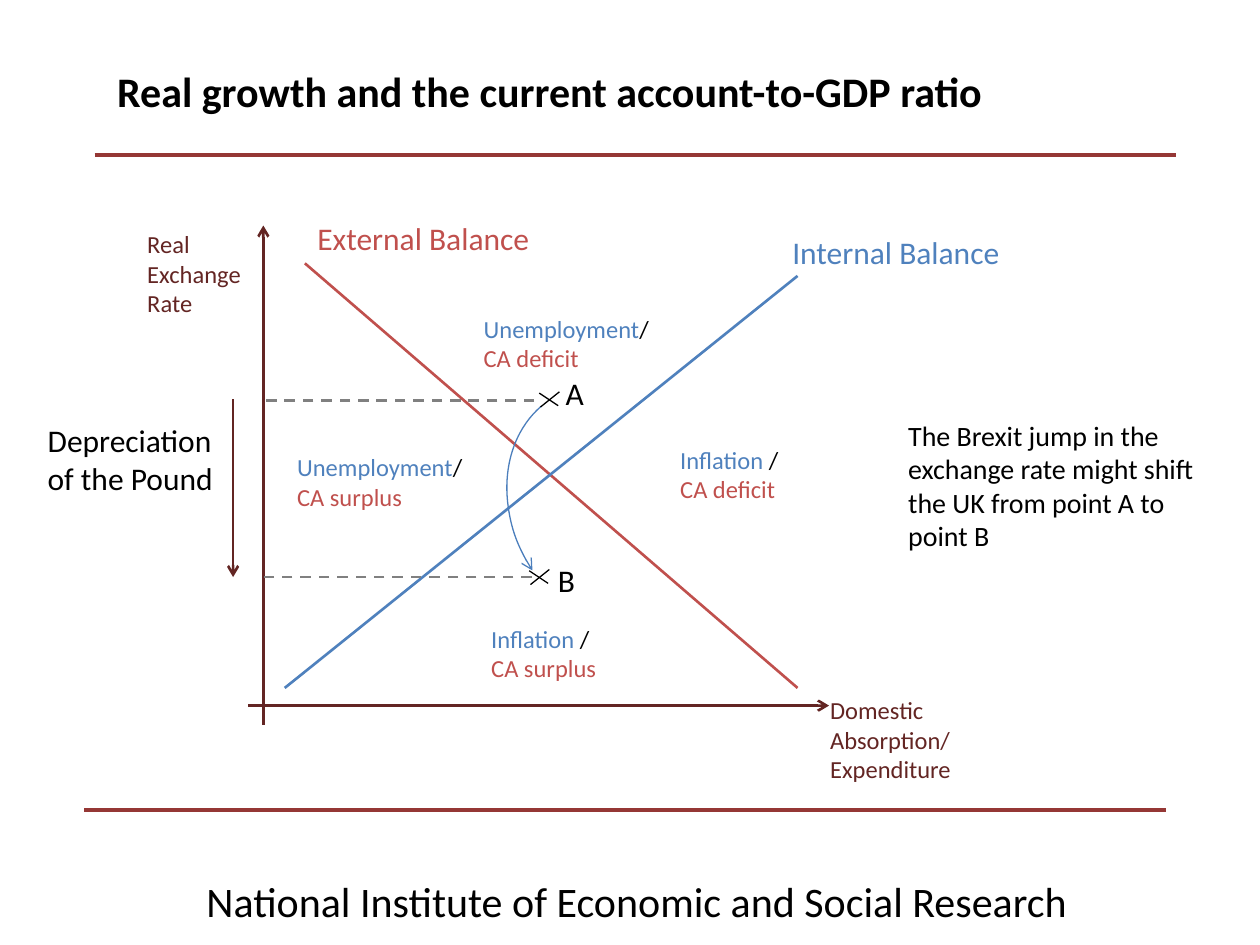
from dataclasses import dataclass

from lxml.etree import SubElement
from pptx import Presentation
from pptx.dml.color import RGBColor
from pptx.enum.dml import MSO_LINE
from pptx.enum.shapes import MSO_CONNECTOR, MSO_SHAPE
from pptx.enum.text import MSO_ANCHOR, PP_ALIGN
from pptx.oxml.ns import qn
from pptx.util import Emu, Pt


@dataclass(frozen=True)
class Theme:
    font: str = "Calibri"
    text: str = "000000"
    rule: str = "953735"
    axis: str = "632523"
    external: str = "C0504D"
    internal: str = "4F81BD"
    shift: str = "4B7EBC"
    guide: str = "808080"
    heading: int = 24
    large: int = 18
    note: int = 16
    small: int = 14
    thick: float = 2.25
    medium: float = 1.5
    thin: float = 0.75


T = Theme()
PX = 9144

TITLE = "Real growth and the current account-to-GDP ratio"
TITLE_BOX = (83, 47, 867, 50)

RULES = [(75, 123, 933, 123), (67, 643, 925, 643)]
ARROWS = [(209, 575, 209, 179), (197, 560, 658, 560), (185, 317, 185, 458)]
CURVES = [
    ((633, 546, 242, 209), T.external),
    ((633, 219, 226, 546), T.internal),
]
GUIDES = [(424, 318, 206, 318), (422, 458, 203, 458)]
POINTS = [(436, 317), (428, 458)]
CROSS = [(7, 5, -8, -5), (8, -6, -7, 6)]
SHIFT_BOX = (389, 319, 212, 173)
SHIFT_TURN = 236.9
SHIFT_ANGLES = (270, 355)

LABELS = [
    ((154, 690, 795, 40), T.heading, T.text,
     ["National Institute of Economic and Social Research"]),
    ((242, 169, 196, 40), T.large, T.external, ["External Balance"]),
    ((619, 180, 360, 40), T.large, T.internal, ["Internal Balance"]),
    ((107, 177, 99, 81), T.small, T.axis, ["Real Exchange", "Rate"]),
    ((649, 547, 150, 81), T.small, T.axis, ["Domestic Absorption/", "Expenditure"]),
    ((439, 292, 39, 40), T.large, T.text, ["A"]),
    ((433, 440, 39, 40), T.large, T.text, ["B"]),
    ((711, 327, 267, 118), T.note, T.text,
     ["The Brexit jump in the exchange rate might shift the UK from point A to point B"]),
    ((28, 329, 168, 71), T.large, T.text, ["Depreciation of the Pound"]),
]
ZONES = [
    ((380, 490, 115, 57), "Inflation", " /", "CA surplus"),
    ((530, 348, 115, 57), "Inflation", " /", "CA deficit"),
    ((374, 244, 158, 57), "Unemployment", "/", "CA deficit"),
    ((226, 354, 156, 57), "Unemployment", "/", "CA surplus"),
]


def px(values):
    return [Emu(v * PX) for v in values]


def style_run(r, size, color, bold=False):
    r.font.name = T.font
    r.font.size = Pt(size)
    r.font.bold = bold
    r.font.color.rgb = RGBColor.from_string(color)


def style_line(line, color, width):
    line.color.rgb = RGBColor.from_string(color)
    line.width = Pt(width)


def add_arrowhead(sp, end):
    ln = sp.line._get_or_add_ln()
    SubElement(ln, qn(f"a:{end}"), type="arrow")


def add_line(shapes, ends, color, width):
    sp = shapes.add_connector(MSO_CONNECTOR.STRAIGHT, *px(ends))
    style_line(sp.line, color, width)
    SubElement(sp._element.spPr, qn("a:effectLst"))
    return sp


def add_text(shapes, box, size, paragraphs):
    tf = shapes.add_textbox(*px(box)).text_frame
    tf.word_wrap = True
    for i, runs in enumerate(paragraphs):
        p = tf.add_paragraph() if i else tf.paragraphs[0]
        for text, color in runs:
            r = p.add_run()
            r.text = text
            style_run(r, size, color)


def add_title(shapes):
    sp = shapes.title
    sp.left, sp.top, sp.width, sp.height = px(TITLE_BOX)
    tf = sp.text_frame
    tf.text = TITLE
    tf.word_wrap = True
    tf.vertical_anchor = MSO_ANCHOR.TOP
    p = tf.paragraphs[0]
    p.alignment = PP_ALIGN.LEFT
    style_run(p.runs[0], T.heading, T.text, bold=True)


def add_shift(shapes):
    sp = shapes.add_shape(MSO_SHAPE.ARC, *px(SHIFT_BOX))
    sp.rotation = SHIFT_TURN
    for i, angle in enumerate(SHIFT_ANGLES):
        sp.adjustments[i] = angle * 0.6
    sp.shadow.inherit = False
    sp.fill.background()
    style_line(sp.line, T.shift, T.thin)
    add_arrowhead(sp, "headEnd")


def main():
    prs = Presentation()
    prs.slide_width, prs.slide_height = px((1000, 750))
    shapes = prs.slides.add_slide(prs.slide_layouts[5]).shapes

    add_title(shapes)
    for ends in RULES:
        add_line(shapes, ends, T.rule, T.thick)
    for ends in ARROWS:
        add_arrowhead(add_line(shapes, ends, T.axis, T.medium), "tailEnd")
    for ends, color in CURVES:
        add_line(shapes, ends, color, T.medium)
    for box, size, color, lines in LABELS:
        add_text(shapes, box, size, [[(line, color)] for line in lines])
    for box, activity, slash, account in ZONES:
        add_text(shapes, box, T.small,
                 [[(activity, T.internal), (slash, T.text)], [(account, T.external)]])
    add_shift(shapes)
    for ends in GUIDES:
        add_line(shapes, ends, T.guide, T.medium).line.dash_style = MSO_LINE.DASH
    for x, y in POINTS:
        for x1, y1, x2, y2 in CROSS:
            add_line(shapes, (x + x1, y + y1, x + x2, y + y2), T.text, T.thin)

    prs.save("out.pptx")


if __name__ == "__main__":
    main()
